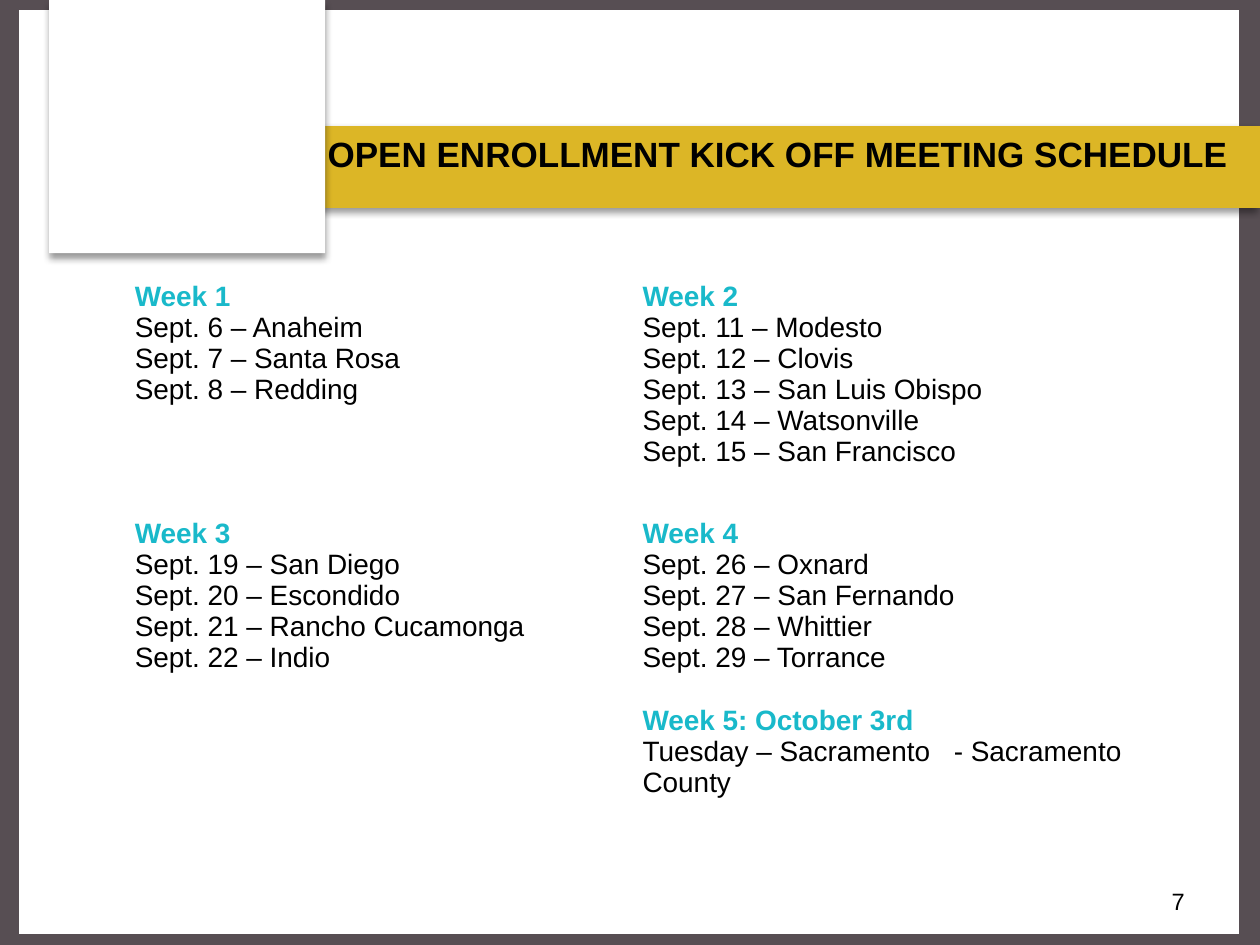
import pptx
import pptx.util
import pptx.dml.color
import pptx.enum.shapes
import pptx.enum.text
import pptx.oxml
import pptx.oxml.ns

Inches, Pt = pptx.util.Inches, pptx.util.Pt
RGBColor = pptx.dml.color.RGBColor
WHITE = RGBColor(0xFF, 0xFF, 0xFF)
BLACK = RGBColor(0, 0, 0)
FRAME = RGBColor(0x57, 0x4E, 0x53)
GOLD = RGBColor(0xDC, 0xB6, 0x26)
TEAL = RGBColor(0x19, 0xB9, 0xCA)
NS = pptx.oxml.ns.nsdecls("a")

# Each cell holds week blocks: a heading and its meetings
SCHEDULE = [
    [[("Week 1", ["Sept. 6 – Anaheim", "Sept. 7 – Santa Rosa", "Sept. 8 – Redding"])],
     [("Week 2", ["Sept. 11 – Modesto", "Sept. 12 – Clovis", "Sept. 13 – San Luis Obispo",
                  "Sept. 14 – Watsonville", "Sept. 15 – San Francisco"])]],
    [[("Week 3", ["Sept. 19 – San Diego", "Sept. 20 – Escondido",
                  "Sept. 21 – Rancho Cucamonga", "Sept. 22 – Indio"])],
     [("Week 4", ["Sept. 26 – Oxnard", "Sept. 27 – San Fernando",
                  "Sept. 28 – Whittier", "Sept. 29 – Torrance"]),
      ("Week 5: October 3rd", ["Tuesday – Sacramento\t- Sacramento County"])]],
]


def add_run(p, text, size, color=BLACK, bold=False):
    r = p.add_run()
    r.text = text
    r.font.name, r.font.size, r.font.bold = "Arial", Pt(size), bold
    r.font.color.rgb = color


def add_panel(left, top, width, height, fill, shadow_angle=None):
    sp = s.shapes.add_shape(pptx.enum.shapes.MSO_SHAPE.RECTANGLE,
                            Inches(left), Inches(top), Inches(width), Inches(height))
    sp.shadow.inherit = False
    sp.fill.solid()
    sp.fill.fore_color.rgb = fill
    sp.line.fill.background()
    if shadow_angle is not None:
        effects = sp._element.spPr.find(pptx.oxml.ns.qn("a:effectLst"))
        effects.append(pptx.oxml.parse_xml(
            f'<a:outerShdw {NS} blurRad="{Pt(4)}" dist="{Pt(3)}" dir="{shadow_angle * 60000}" '
            'algn="ctr" rotWithShape="0"><a:srgbClr val="000000"><a:alpha val="40000"/>'
            '</a:srgbClr></a:outerShdw>'))
    return sp


prs = pptx.Presentation()
prs.slide_width, prs.slide_height = Inches(10), Inches(7.5)
s = prs.slides.add_slide(prs.slide_layouts[5])
s.background.fill.solid()
s.background.fill.fore_color.rgb = WHITE

# Frame, gold title band and white corner panel
frame = add_panel(0.07, 0, 9.85, 7.5, WHITE)
frame.line.color.rgb = FRAME
frame.line.width = Pt(12)
add_panel(1.42, 1, 8.58, 0.65, GOLD, 135)
add_panel(0.39, 0, 2.19, 2.01, WHITE, 90)

# Title, brought in front of the band
title = s.shapes.title
s.shapes._spTree.append(title._element)
title.left, title.top, title.width, title.height = Inches(2.5), Inches(1), Inches(7.5), Inches(0.55)
tf = title.text_frame
tf.vertical_anchor = pptx.enum.text.MSO_ANCHOR.TOP
p = tf.paragraphs[0]
p.alignment = pptx.enum.text.PP_ALIGN.LEFT
add_run(p, "OPEN ENROLLMENT KICK OFF MEETING SCHEDULE", 20, bold=True)

# Page number
tf = s.shapes.add_textbox(Inches(7.17), Inches(6.95), Inches(2.33), Inches(0.4)).text_frame
tf.word_wrap = True
tf.vertical_anchor = pptx.enum.text.MSO_ANCHOR.MIDDLE
p = tf.paragraphs[0]
p.alignment = pptx.enum.text.PP_ALIGN.RIGHT
add_run(p, "7", 13.5)

# Schedule table
table = s.shapes.add_table(2, 2, Inches(1), Inches(2.19), Inches(8), Inches(4.77)).table
table.first_row = table.horz_banding = False
for column, width in zip(table.columns, (4.03, 3.97)):
    column.width = Inches(width)
for row, height in zip(table.rows, (1.88, 2.89)):
    row.height = Inches(height)

for i, week_row in enumerate(SCHEDULE):
    for j, weeks in enumerate(week_row):
        cell = table.cell(i, j)
        cell.margin_left = cell.margin_right = Inches(0.07)
        cell.margin_top = cell.margin_bottom = Inches(0.04)

        # White borders, heavier under the first row
        for side in ("lnL", "lnR", "lnT", "lnB"):
            width = 3 if (i, side) in ((0, "lnB"), (1, "lnT")) else 1
            cell._tc.get_or_add_tcPr().append(pptx.oxml.parse_xml(
                f'<a:{side} {NS} w="{Pt(width)}"><a:solidFill><a:srgbClr val="{WHITE}"/>'
                f'</a:solidFill></a:{side}>'))
        cell.fill.background()

        # Week headings and meetings
        p = cell.text_frame.paragraphs[0]
        for k, (heading, meetings) in enumerate(weeks):
            if k:
                p = cell.text_frame.add_paragraph()
                p.space_before = Pt(18.4)
            add_run(p, heading, 16, TEAL, True)
            for meeting in meetings:
                p = cell.text_frame.add_paragraph()
                if "\t" in meeting:
                    p._p.get_or_add_pPr().append(pptx.oxml.parse_xml(
                        f'<a:tabLst {NS}><a:tab pos="{Inches(2.47)}" algn="l"/></a:tabLst>'))
                add_run(p, meeting, 16)

prs.save("out.pptx")
